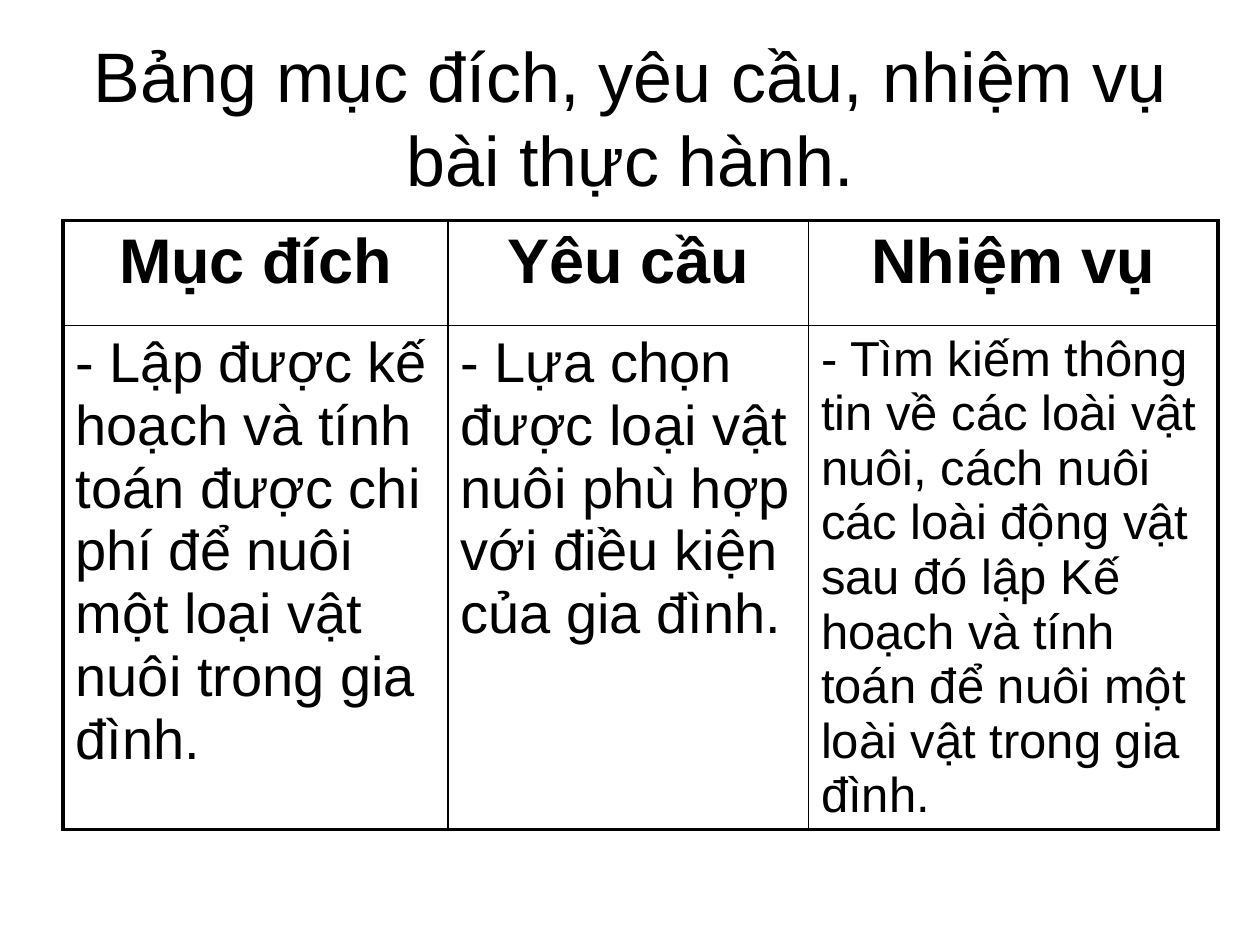
from lxml import etree
from pptx import Presentation
from pptx.dml.color import RGBColor
from pptx.enum.text import MSO_ANCHOR, PP_ALIGN
from pptx.oxml.ns import qn
from pptx.util import Pt

CENTER, LEFT = PP_ALIGN.CENTER, PP_ALIGN.LEFT
MIDDLE = MSO_ANCHOR.MIDDLE
FONT, BLACK = "Arial", "000000"
OUTER_LINE, INNER_LINE = 2.25, 1

TITLE = "Bảng mục đích, yêu cầu, nhiệm vụ bài thực hành."
COLUMNS = [  # heading, body, body size, width
    ("Mục đích",
     "- Lập được kế hoạch và tính toán được chi phí để nuôi một loại vật nuôi trong gia đình.",
     32, 220),
    ("Yêu cầu",
     "- Lựa chọn được loại vật nuôi phù hợp với điều kiện của gia đình.",
     32, 206),
    ("Nhiệm vụ",
     "- Tìm kiếm thông tin về các loài vật nuôi, cách nuôi các loài động vật sau đó "
     "lập Kế hoạch và tính toán để nuôi một loài vật trong gia đình.",
     28, 234),
]
ROW_HEIGHTS = [60, 240]
HEADING_SIZE = 36


def write(text_frame, text, size, align, bold=False):
    text_frame.text = text
    paragraph = text_frame.paragraphs[0]
    paragraph.alignment = align
    font = paragraph.runs[0].font
    font.name, font.size, font.bold = FONT, Pt(size), bold
    font.color.rgb = RGBColor.from_string(BLACK)


def set_borders(cell, widths):
    """Add solid border lines; widths maps L, R, T, B to points, in that order."""
    properties = cell._tc.get_or_add_tcPr()
    for position, (side, width) in enumerate(widths.items()):
        line = etree.Element(qn(f"a:ln{side}"), w=str(Pt(width)))
        fill = etree.SubElement(line, qn("a:solidFill"))
        etree.SubElement(fill, qn("a:srgbClr"), val=BLACK)
        properties.insert(position, line)


def add_title(slide):
    title = slide.shapes.title
    title.left, title.top, title.width, title.height = Pt(36), Pt(21.6), Pt(648), Pt(90)
    title.text_frame.word_wrap = True
    title.text_frame.vertical_anchor = MIDDLE
    write(title.text_frame, TITLE, 40, CENTER)


def add_purpose_table(slide):
    row_count, column_count = len(ROW_HEIGHTS), len(COLUMNS)
    total_width = sum(column[-1] for column in COLUMNS)
    table = slide.shapes.add_table(row_count, column_count, Pt(36), Pt(126),
                                   Pt(total_width), Pt(sum(ROW_HEIGHTS))).table
    table.first_row = table.horz_banding = False
    for row, height in zip(table.rows, ROW_HEIGHTS):
        row.height = Pt(height)

    for column, (heading, body, body_size, width) in enumerate(COLUMNS):
        table.columns[column].width = Pt(width)
        write(table.cell(0, column).text_frame, heading, HEADING_SIZE, CENTER, bold=True)
        write(table.cell(1, column).text_frame, body, body_size, LEFT)
        for row in range(row_count):
            cell = table.cell(row, column)
            cell.fill.background()
            on_edge = {"L": column == 0, "R": column == column_count - 1,
                       "T": row == 0, "B": row == row_count - 1}
            set_borders(cell, {side: OUTER_LINE if edge else INNER_LINE
                               for side, edge in on_edge.items()})


def main():
    presentation = Presentation()
    presentation.slide_width, presentation.slide_height = Pt(720), Pt(540)
    slide = presentation.slides.add_slide(presentation.slide_layouts[5])
    add_title(slide)
    add_purpose_table(slide)
    presentation.save("out.pptx")


if __name__ == "__main__":
    main()
